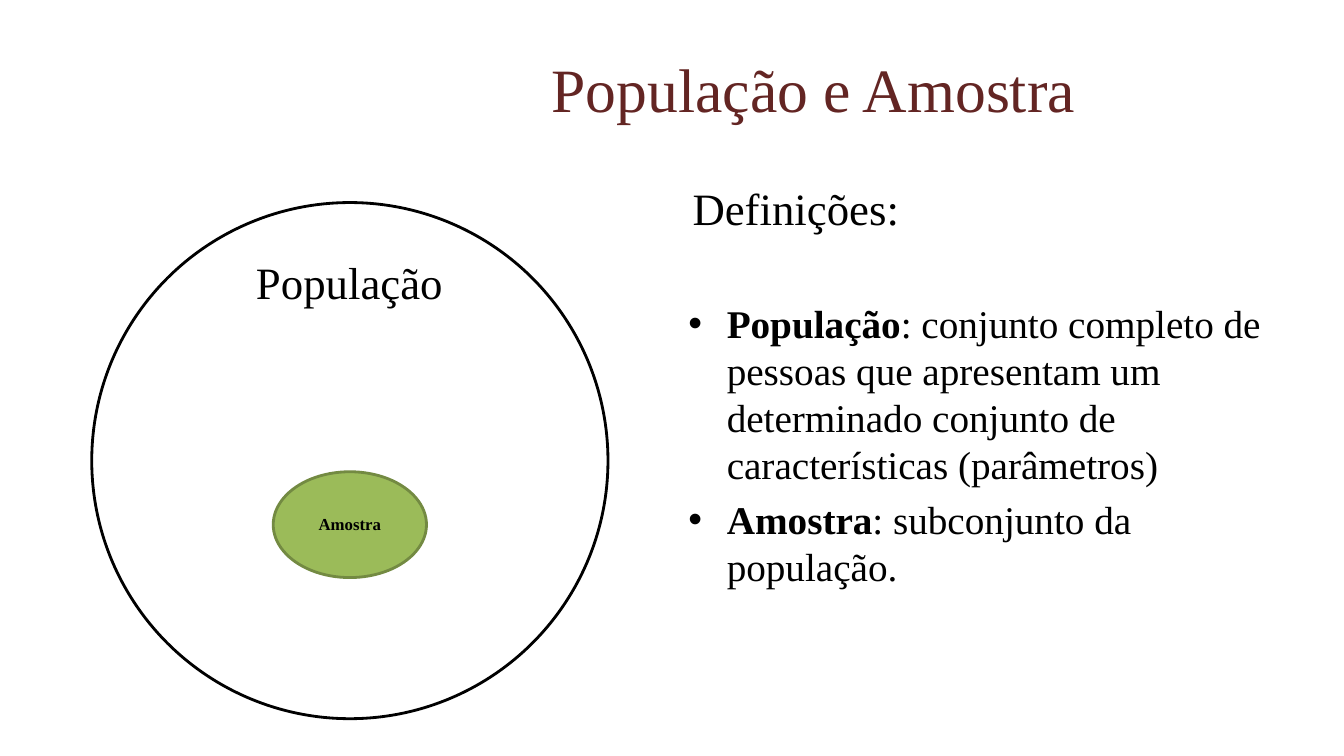
from lxml.etree import SubElement
from pptx import Presentation
from pptx.dml.color import RGBColor
from pptx.enum.shapes import MSO_SHAPE as Shape
from pptx.enum.text import MSO_ANCHOR as Anchor, PP_ALIGN as Align
from pptx.oxml.ns import qn
from pptx.util import Inches, Pt

FONT = "Times New Roman"
BLACK = RGBColor(0x00, 0x00, 0x00)
WHITE = RGBColor(0xFF, 0xFF, 0xFF)
MAROON = RGBColor(0x63, 0x25, 0x23)
GREEN = RGBColor(0x9B, 0xBB, 0x59)
DARK_GREEN = RGBColor(0x73, 0x8A, 0x42)

DEFINITIONS = [
    ("População", ": conjunto completo de pessoas que apresentam um "
                  "determinado conjunto de características (parâmetros)"),
    ("Amostra", ": subconjunto da população."),
]


def add_run(paragraph, text, size, color=BLACK, bold=False):
    run = paragraph.add_run()
    run.text = text
    run.font.name = FONT
    run.font.size = Pt(size)
    run.font.color.rgb = color
    run.font.bold = bold


def add_text_box(slide, box, anchor=Anchor.MIDDLE):
    frame = slide.shapes.add_textbox(*map(Inches, box)).text_frame
    frame.word_wrap = True
    frame.vertical_anchor = anchor
    return frame


def add_ellipse(slide, box, fill, line):
    shape = slide.shapes.add_shape(Shape.OVAL, *map(Inches, box))
    shape.shadow.inherit = False
    shape.fill.solid()
    shape.fill.fore_color.rgb = fill
    shape.line.color.rgb = line
    shape.line.width = Pt(2)


def add_label(slide, box, text, size, margin, bold=False):
    frame = add_text_box(slide, box)
    frame.margin_left = frame.margin_right = Inches(margin)
    frame.margin_top = frame.margin_bottom = Inches(margin)
    paragraph = frame.paragraphs[0]
    paragraph.alignment = Align.CENTER
    paragraph.line_spacing = 0.9
    add_run(paragraph, text, size, bold=bold)


def add_title(slide, text):
    frame = add_text_box(slide, (0.85, 0.25, 12, 1.25))
    frame.margin_left = Inches(2.54)
    paragraph = frame.paragraphs[0]
    paragraph.alignment = Align.CENTER
    add_run(paragraph, text, 44, MAROON)


def add_heading(slide, text):
    frame = add_text_box(slide, (6.77, 1.68, 5.89, 0.7), Anchor.BOTTOM)
    paragraph = frame.paragraphs[0]
    paragraph.space_before = Pt(6.4)
    add_run(paragraph, text, 32)


def set_bullet(paragraph):
    properties = paragraph._p.get_or_add_pPr()
    properties.set("marL", str(Inches(0.38)))
    properties.set("indent", str(Inches(-0.38)))
    SubElement(properties, qn("a:buFont"), typeface="Arial")
    SubElement(properties, qn("a:buChar"), char="•")


def add_definitions(slide, definitions):
    frame = add_text_box(slide, (6.73, 2.92, 5.89, 4.32), Anchor.TOP)
    for index, (term, meaning) in enumerate(definitions):
        paragraph = frame.add_paragraph() if index else frame.paragraphs[0]
        paragraph.space_before = Pt(5.6)
        set_bullet(paragraph)
        add_run(paragraph, term, 28, bold=True)
        add_run(paragraph, meaning, 28)


def main():
    presentation = Presentation()
    presentation.slide_width = Inches(13.33)
    presentation.slide_height = Inches(7.5)
    slide = presentation.slides.add_slide(presentation.slide_layouts[6])
    add_title(slide, "População e Amostra")
    add_ellipse(slide, (0.91, 2.01, 5.12, 5.12), WHITE, BLACK)
    add_label(slide, (2.12, 2.39, 2.69, 0.87), "População", 32, 0.25)
    add_ellipse(slide, (2.71, 4.68, 1.52, 1.05), GREEN, DARK_GREEN)
    add_label(slide, (2.93, 4.94, 1.08, 0.53), "Amostra", 12, 0.09, bold=True)
    add_heading(slide, "Definições:")
    add_definitions(slide, DEFINITIONS)
    presentation.save("out.pptx")


if __name__ == "__main__":
    main()
